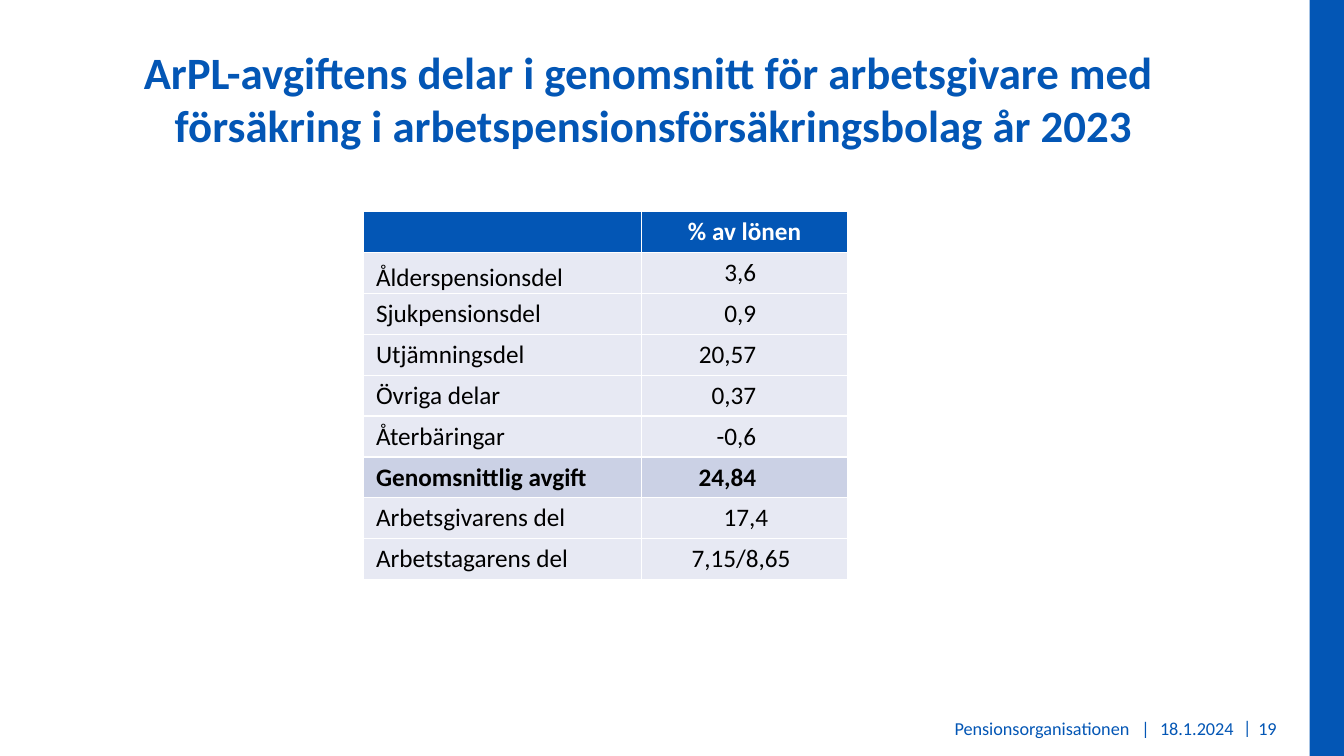
from dataclasses import dataclass

from lxml import etree
from pptx import Presentation
from pptx.dml.color import RGBColor
from pptx.enum.shapes import MSO_SHAPE
from pptx.enum.text import MSO_ANCHOR, PP_ALIGN
from pptx.oxml.ns import qn
from pptx.util import Inches, Pt

LEFT, CENTER, RIGHT = PP_ALIGN.LEFT, PP_ALIGN.CENTER, PP_ALIGN.RIGHT
TOP, MIDDLE, BOTTOM = MSO_ANCHOR.TOP, MSO_ANCHOR.MIDDLE, MSO_ANCHOR.BOTTOM
RECTANGLE = MSO_SHAPE.RECTANGLE
FONT = "Calibri"
COLORS = {
    "blue": "0356B5",
    "white": "FFFFFF",
    "black": "000000",
    "row": "E7E9F3",
    "total": "CBD1E5",
}


@dataclass
class FooterItem:
    text: str
    left: float
    width: float
    align: PP_ALIGN
    top: float = 7.05


@dataclass
class PensionRow:
    label: str
    value: str
    right_inset: float = 0.91
    anchor: MSO_ANCHOR = MIDDLE
    total: bool = False


FOOTER = [
    FooterItem("Pensionsorganisationen", 4.87, 6.33, RIGHT),
    FooterItem("|", 11.32, 0.08, LEFT),
    FooterItem("18.1.2024", 11.39, 0.96, CENTER),
    FooterItem("|", 12.33, 0.08, LEFT, top=7.04),
    FooterItem("19", 12.48, 0.34, LEFT),
]

ROWS = [
    PensionRow("Ålderspensionsdel", "3,6", anchor=BOTTOM),
    PensionRow("Sjukpensionsdel", "0,9"),
    PensionRow("Utjämningsdel", "20,57"),
    PensionRow("Övriga delar", "0,37"),
    PensionRow("Återbäringar", "-0,6"),
    PensionRow("Genomsnittlig avgift", "24,84", total=True),
    PensionRow("Arbetsgivarens del", "17,4", right_inset=0.79),
    PensionRow("Arbetstagarens del", "7,15/8,65", right_inset=0.57),
]


def rgb(name: str) -> RGBColor:
    return RGBColor.from_string(COLORS[name])


def format_text(tf, size: float, color: str, align: PP_ALIGN, bold: bool = False) -> None:
    for p in tf.paragraphs:
        p.alignment = align
        p.font.size = Pt(size)
        for r in p.runs:
            r.font.name = FONT
            r.font.size = Pt(size)
            r.font.bold = bold
            r.font.color.rgb = rgb(color)


def add_footer_item(s, item: FooterItem) -> None:
    box = s.shapes.add_textbox(Inches(item.left), Inches(item.top), Inches(item.width), Inches(0.35))
    tf = box.text_frame
    tf.margin_left = tf.margin_right = 0
    tf.vertical_anchor = MIDDLE
    tf.word_wrap = len(item.text) > 2
    tf.text = item.text
    format_text(tf, 13, "blue", item.align)


def add_borders(cell) -> None:
    tc_pr = cell._tc.get_or_add_tcPr()
    for side in ("a:lnL", "a:lnR", "a:lnT", "a:lnB"):
        line = etree.SubElement(tc_pr, qn(side), w=str(Pt(1)))
        fill = etree.SubElement(line, qn("a:solidFill"))
        etree.SubElement(fill, qn("a:srgbClr"), val=COLORS["white"])


def set_cell(cell, text: str, fill: str, color: str, align: PP_ALIGN, bold: bool,
             left: float = 0, right: float = 0, anchor: MSO_ANCHOR = MIDDLE) -> None:
    add_borders(cell)
    cell.fill.solid()
    cell.fill.fore_color.rgb = rgb(fill)
    cell.margin_left, cell.margin_right = Inches(left), Inches(right)
    cell.margin_top = cell.margin_bottom = 0
    cell.vertical_anchor = anchor
    cell.text = text
    format_text(cell.text_frame, 18, color, align, bold)


def add_pension_table(s) -> None:
    frame = s.shapes.add_table(len(ROWS) + 1, 2, Inches(3.6), Inches(2.1), Inches(4.81), Inches(3.65))
    table = frame.table
    table.horz_banding = False
    for column, width in zip(table.columns, (2.76, 2.05)):
        column.width = Inches(width)
    for col, heading in enumerate(("", "% av lönen")):
        set_cell(table.cell(0, col), heading, "blue", "white", CENTER, True)
    for i, row in enumerate(ROWS, start=1):
        fill = "total" if row.total else "row"
        set_cell(table.cell(i, 0), row.label, fill, "black", LEFT, row.total,
                 left=0.13, anchor=row.anchor)
        set_cell(table.cell(i, 1), row.value, fill, "black", RIGHT, row.total,
                 right=row.right_inset)


def main() -> None:
    prs = Presentation()
    prs.slide_width, prs.slide_height = Inches(13.33), Inches(7.5)
    s = prs.slides.add_slide(prs.slide_layouts[5])

    # Title
    title = s.shapes.title
    title.left, title.top = Inches(0), Inches(0.39)
    title.width, title.height = Inches(12.97), Inches(1.46)
    tf = title.text_frame
    tf.vertical_anchor = TOP
    tf.text = ("ArPL-avgiftens delar i genomsnitt för arbetsgivare med \v"
               "försäkring i arbetspensionsförsäkringsbolag år 2023")
    format_text(tf, 32, "blue", CENTER, bold=True)

    # Side band
    band = s.shapes.add_shape(RECTANGLE, Inches(12.99), 0, Inches(0.34), prs.slide_height)
    band.shadow.inherit = False
    band.fill.solid()
    band.fill.fore_color.rgb = rgb("blue")
    band.line.fill.background()

    # Contribution table
    add_pension_table(s)

    # Footer
    for item in FOOTER:
        add_footer_item(s, item)

    prs.save("out.pptx")


if __name__ == "__main__":
    main()
